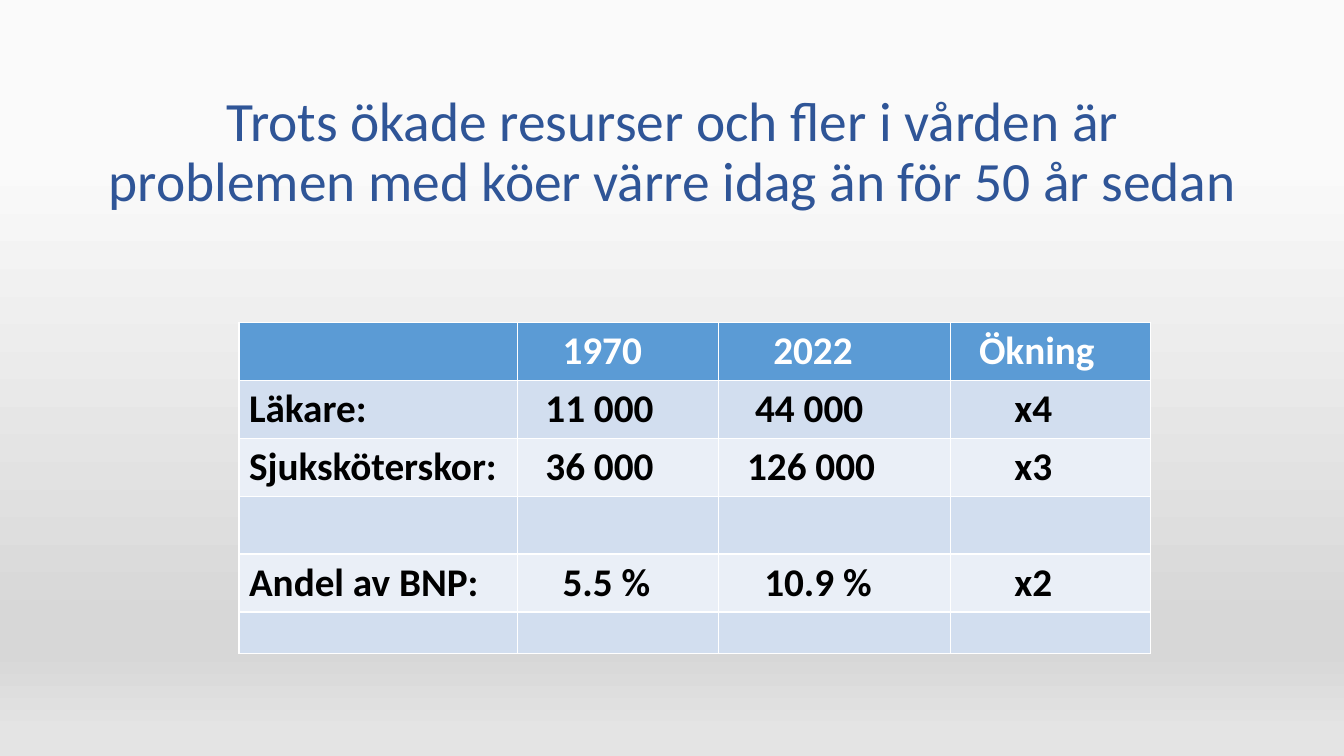
import pptx
import pptx.util
import pptx.dml.color
import pptx.enum.text
import pptx.oxml
import pptx.oxml.ns
from pptx.util import Inches

TITLE = "Trots ökade resurser och fler i vården är problemen med köer värre idag än för 50 år sedan"
# Each cell is its text and left indent in inches.
ROWS = [
    [None, ("1970", 0.45), ("2022", 0.54), ("Ökning", 0.28)],
    [("Läkare:", 0.1), ("11 000", 0.28), ("44 000", 0.36), ("x4", 0.63)],
    [("Sjuksköterskor:", 0.1), ("36 000", 0.28), ("126 000", 0.28), ("x3", 0.63)],
    [None] * 4,
    [("Andel av BNP:", 0.1), ("5.5 %", 0.45), ("10.9 %", 0.45), ("x2", 0.63)],
    [None] * 4,
]
COLUMN_WIDTHS = [2.76, 2, 2.3, 1.98]
ROW_HEIGHTS = [0.57] * 5 + [0.41]
COLORS = {
    "title": "2F5597", "header": "5B9BD5", "odd": "D2DEEF", "even": "EAEFF7",
    "white": "FFFFFF", "black": "000000",
}
BACKGROUND_STOPS = [(21, "FAFAFA"), (83, "D7D7D7"), (86, "D7D7D7"), (97, "E4E4E4")]


def rgb(name):
    return pptx.dml.color.RGBColor.from_string(COLORS[name])


def write(frame, text, size, color, bold=False, align=None, line_spacing=None):
    para = frame.paragraphs[0]
    para.alignment = align
    para.line_spacing = line_spacing
    span = para.add_run()
    span.text = text
    span.font.name = "Calibri"
    span.font.size = pptx.util.Pt(size)
    span.font.bold = bold
    span.font.color.rgb = rgb(color)


def paint_background(page):
    fill = page.background.fill
    fill.gradient()
    fill.gradient_angle = 270
    stops = page.element.find(".//" + pptx.oxml.ns.qn("a:gsLst"))
    for stop in list(stops):
        stops.remove(stop)
    for percent, color in BACKGROUND_STOPS:
        stops.append(pptx.oxml.parse_xml(
            f'<a:gs {pptx.oxml.ns.nsdecls("a")} pos="{percent * 1000}">'
            f'<a:srgbClr val="{color}"/></a:gs>'))


def outline(cell):
    """Give all four sides of the cell a white line of one point."""
    properties = cell._tc.get_or_add_tcPr()
    for position, side in enumerate("LRTB"):
        properties.insert(position, pptx.oxml.parse_xml(
            f'<a:ln{side} {pptx.oxml.ns.nsdecls("a")} w="12700"><a:solidFill>'
            f'<a:srgbClr val="{COLORS["white"]}"/></a:solidFill></a:ln{side}>'))


def add_title(page):
    title = page.shapes.title
    title.left, title.top = Inches(0.92), Inches(0.8)
    title.width, title.height = Inches(11.5), Inches(1.45)
    frame = title.text_frame
    frame.word_wrap = True
    frame.auto_size = pptx.enum.text.MSO_AUTO_SIZE.NONE
    frame.vertical_anchor = pptx.enum.text.MSO_ANCHOR.MIDDLE
    write(frame, TITLE, 39.6, "title",
          align=pptx.enum.text.PP_ALIGN.CENTER, line_spacing=0.9)


def add_resource_table(page):
    table = page.shapes.add_table(
        len(ROWS), len(COLUMN_WIDTHS), Inches(2.37), Inches(3.2),
        Inches(sum(COLUMN_WIDTHS)), Inches(sum(ROW_HEIGHTS))).table
    for column, width in zip(table.columns, COLUMN_WIDTHS):
        column.width = Inches(width)
    for index, (row, height) in enumerate(zip(ROWS, ROW_HEIGHTS)):
        table.rows[index].height = Inches(height)
        band = "header" if index == 0 else ("odd" if index % 2 else "even")
        for cell, content in zip(table.rows[index].cells, row):
            cell.fill.solid()
            cell.fill.fore_color.rgb = rgb(band)
            outline(cell)
            if content:
                text, indent = content
                cell.margin_left = Inches(indent)
                write(cell.text_frame, text, 28, "black" if index else "white", bold=True)


def main():
    deck = pptx.Presentation()
    deck.slide_width, deck.slide_height = Inches(13.33), Inches(7.5)
    page = deck.slides.add_slide(deck.slide_layouts[5])
    paint_background(page)
    add_title(page)
    add_resource_table(page)
    deck.save("out.pptx")


if __name__ == "__main__":
    main()
